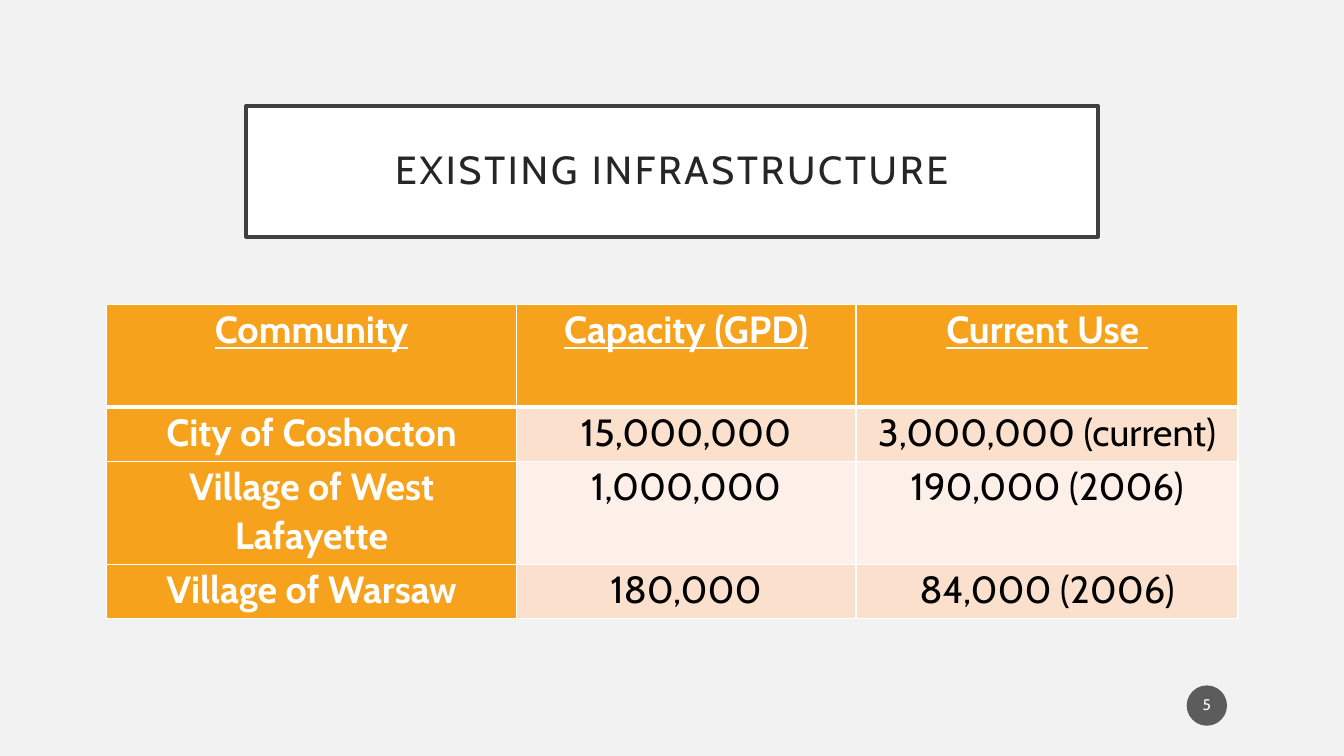
from dataclasses import dataclass

from lxml.etree import SubElement
from pptx import Presentation
from pptx.dml.color import RGBColor as RGB
from pptx.enum.shapes import MSO_SHAPE as Shape
from pptx.enum.text import MSO_ANCHOR as Anchor, PP_ALIGN as Align
from pptx.oxml.ns import qn
from pptx.util import Inches, Pt


@dataclass(frozen=True)
class Theme:
    font: str = "Cabin"
    background: str = "F2F2F2"
    white: str = "FFFFFF"
    black: str = "000000"
    title: str = "262626"
    frame: str = "404040"
    accent: str = "F6A21D"
    bands: tuple = ("FBE0CD", "FDF0E8")
    badge: str = "1D1D1D"
    title_size: int = 28
    table_size: int = 27
    badge_size: int = 11


THEME = Theme()

ROWS = [
    ("Community", "Capacity (GPD)", "Current Use "),
    ("City of Coshocton", "15,000,000", "3,000,000 (current)"),
    ("Village of West Lafayette", "1,000,000", "190,000 (2006)"),
    ("Village of Warsaw", "180,000", "84,000 (2006)"),
]
COLUMN_WIDTHS = (4.06, 3.37, 3.79)
ROW_HEIGHTS = (1.02, 0.54, 1.02, 0.54)


def paint(fill, color):
    fill.solid()
    fill.fore_color.rgb = RGB.from_string(color)


def write(tf, text, size, color, bold=False, underline=False,
          line_spacing=0.9, tracking=0, space_after=0):
    p = tf.paragraphs[0]
    p.alignment = Align.CENTER
    p.line_spacing = line_spacing
    p.space_after = Pt(space_after)
    r = p.add_run()
    r.text = text
    r.font.name = THEME.font
    r.font.size = Pt(size)
    r.font.bold = bold
    r.font.underline = underline
    r.font.color.rgb = RGB.from_string(color)
    if tracking:
        r.font._element.set("spc", str(tracking * 100))


def set_margins(target, x, y):
    target.margin_left = target.margin_right = Inches(x)
    target.margin_top = target.margin_bottom = Inches(y)


def add_block(s, kind, box, color, margins):
    sp = s.shapes.add_shape(kind, *map(Inches, box))
    sp.shadow.inherit = False
    paint(sp.fill, color)
    tf = sp.text_frame
    tf.word_wrap = True
    tf.vertical_anchor = Anchor.MIDDLE
    set_margins(tf, *margins)
    return sp


def add_title(s, box):
    sp = add_block(s, Shape.RECTANGLE, box, THEME.white, (0.2, 0.2))
    sp.line.color.rgb = RGB.from_string(THEME.frame)
    sp.line.width = Pt(2.5)
    write(sp.text_frame, "EXISTING INFRASTRUCTURE", THEME.title_size,
          THEME.title, tracking=2)


def add_border(cell, side, width):
    ln = SubElement(cell._tc.get_or_add_tcPr(), qn(f"a:ln{side}"), w=str(Pt(width)))
    SubElement(SubElement(ln, qn("a:solidFill")), qn("a:srgbClr"), val=THEME.white)


def format_cell(cell, text, row, column):
    header = row == 0
    label = header or column == 0
    for side in "LRTB":
        under_header = (row, side) in ((0, "B"), (1, "T"))
        add_border(cell, side, 3 if under_header else 1)
    paint(cell.fill, THEME.accent if label else THEME.bands[(row - 1) % 2])
    set_margins(cell, 0.17, 0)
    write(cell.text_frame, text, THEME.table_size,
          THEME.white if label else THEME.black,
          bold=label, underline=header, line_spacing=1.06)


def add_capacity_table(s, box):
    table = s.shapes.add_table(len(ROWS), len(COLUMN_WIDTHS), *map(Inches, box)).table
    for column, width in zip(table.columns, COLUMN_WIDTHS):
        column.width = Inches(width)
    for row, height in zip(table.rows, ROW_HEIGHTS):
        row.height = Inches(height)
    for i, texts in enumerate(ROWS):
        for j, text in enumerate(texts):
            format_cell(table.cell(i, j), text, i, j)


def add_page_badge(s, box, number):
    sp = add_block(s, Shape.OVAL, box, THEME.badge, (0.02, 0.05))
    sp.line.fill.background()
    color = sp._element.spPr.find(qn("a:solidFill")).find(qn("a:srgbClr"))
    SubElement(color, qn("a:alpha"), val="70000")
    write(sp.text_frame, str(number), THEME.badge_size, THEME.white, space_after=6)


def main():
    prs = Presentation()
    prs.slide_width, prs.slide_height = Inches(13.33), Inches(7.5)
    s = prs.slides.add_slide(prs.slide_layouts[6])
    paint(s.background.fill, THEME.background)
    add_title(s, (2.44, 1.05, 8.45, 1.3))
    add_capacity_table(s, (1.06, 3.02, sum(COLUMN_WIDTHS), sum(ROW_HEIGHTS)))
    add_page_badge(s, (11.77, 6.8, 0.4, 0.4), 5)
    prs.save("out.pptx")


if __name__ == "__main__":
    main()
